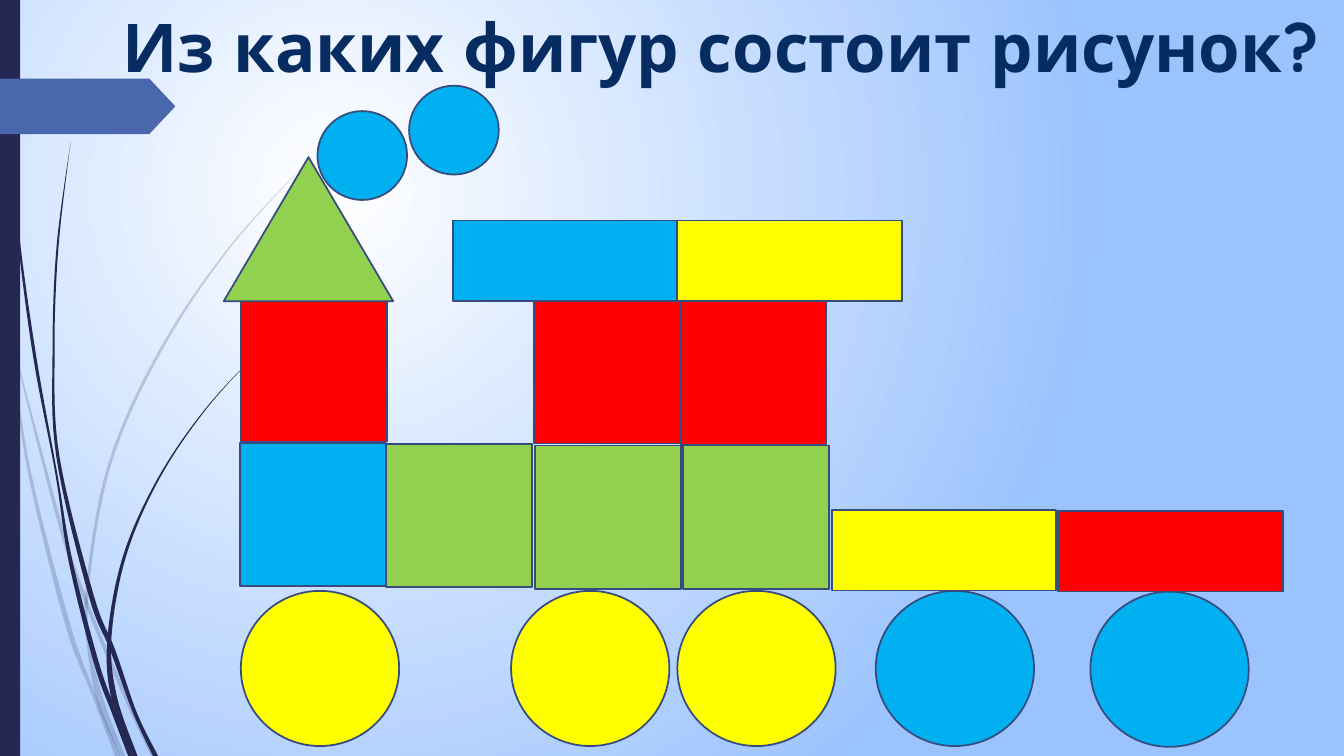
from lxml import etree
from pptx import Presentation
from pptx.dml.color import RGBColor
from pptx.enum.shapes import MSO_SHAPE
from pptx.enum.text import MSO_ANCHOR, MSO_AUTO_SIZE, PP_ALIGN
from pptx.oxml.ns import qn
from pptx.util import Cm, Pt

RECTANGLE = MSO_SHAPE.RECTANGLE
ELLIPSE = MSO_SHAPE.OVAL
TRIANGLE = MSO_SHAPE.ISOSCELES_TRIANGLE
PENTAGON = MSO_SHAPE.PENTAGON
TOP = MSO_ANCHOR.TOP
CENTER = PP_ALIGN.CENTER
NO_AUTOFIT = MSO_AUTO_SIZE.NONE

WHITE = RGBColor(0xFF, 0xFF, 0xFF)
SKY = RGBColor(0x9B, 0xC3, 0xFE)
NAVY = RGBColor(0x24, 0x28, 0x52)
INDIGO = RGBColor(0x4A, 0x66, 0xAC)
OUTLINE = RGBColor(0x37, 0x4B, 0x7F)
TITLE_BLUE = RGBColor(0x07, 0x2C, 0x62)
RED = RGBColor(0xFF, 0x00, 0x00)
YELLOW = RGBColor(0xFF, 0xFF, 0x00)
GREEN = RGBColor(0x92, 0xD0, 0x50)
BLUE = RGBColor(0x00, 0xB0, 0xF0)

FONT = "Quicksand"
SLIDE_WIDTH, SLIDE_HEIGHT = 33.87, 19.05
CURVE_STEPS = 8

PALE_STEMS = [
    [(0, 7.37, 0.08), (0.28, 8.89, 0.05), (0.75, 11.94, 0.08), (1.71, 15.75, 0.13),
     (2.36, 17.5, 0.1), (2.96, 19.05, 0.13)],
    [(0.38, 8.89, 0.03), (1.52, 13.23, 0.1), (2.18, 15.19, 0.1), (3.18, 17.6, 0.1),
     (3.87, 19.05, 0.13)],
    [(7.92, 3.89, 0), (5.8, 6.22, 0.05), (4.04, 8.84, 0.08), (2.76, 11.71, 0.08),
     (2.2, 14.83, 0.08), (2.26, 16.41, 0.1), (2.57, 17.78, 0.18), (3.09, 19.05, 0.13)],
]
DARK_STEMS = [
    [(0.09, 0, 0.03), (0.19, 2.79, 0.03), (0.46, 5.92, 0.05), (0.88, 9.02, 0.08),
     (1.42, 11.94, 0.05), (1.78, 14.15, 0.1), (2.43, 16.71, 0.13), (2.87, 17.93, 0.13),
     (3.28, 19.05, 0.1)],
    [(1.78, 3.58, 0), (1.45, 6.22, 0.05), (1.35, 8.86, 0.05), (1.46, 11.51, 0.08),
     (2.3, 15.01, 0.13), (2.84, 16.38, 0.13), (3.4, 17.96, 0.1), (3.92, 19.05, 0.13)],
    [(6.62, 8.74, 0), (5.19, 10.3, 0.03), (3.99, 12.07, 0.05), (3.14, 14.01, 0.08),
     (2.76, 16.05, 0.1), (2.87, 17.55, 0.15), (3.4, 19.05, 0.13)],
]

WHEEL = (ELLIPSE, 3.99, 3.91)
BLOCK = (RECTANGLE, 3.68, 3.61)
PLANK = (RECTANGLE, 5.66, 2.03)
ROOF = (TRIANGLE, 4.27, 3.63)
PUFF = (ELLIPSE, 2.26, 2.24)

TRAIN = [
    (WHEEL, YELLOW, [(0.43, 12.73), (7.24, 12.73), (11.43, 12.73)]),
    (WHEEL, BLUE, [(16.43, 12.73), (21.84, 12.75)]),
    (BLOCK, BLUE, [(0.41, 9)]),
    (BLOCK, GREEN, [(4.09, 9.02), (7.85, 9.07), (11.58, 9.07)]),
    (BLOCK, RED, [(7.82, 5.41), (11.51, 5.44), (0.43, 5.36)]),
    (PLANK, YELLOW, [(15.32, 10.69), (11.43, 3.4)]),
    (PLANK, RED, [(21.03, 10.72)]),
    (PLANK, BLUE, [(5.77, 3.4)]),
    (ROOF, GREEN, [(0, 1.8)]),
    (PUFF, BLUE, [(2.36, 0.64), (4.67, 0)]),
]


def write_text(frame, text, size=18, color=TITLE_BLUE, bold=False, align=CENTER):
    """Fill a text frame with one formatted paragraph."""
    frame.word_wrap = True
    frame.auto_size = NO_AUTOFIT
    frame.vertical_anchor = TOP
    paragraph = frame.paragraphs[0]
    paragraph.alignment = align
    paragraph.line_spacing = 1.0
    paragraph.space_before = Pt(0)
    run = paragraph.add_run()
    run.text = text
    run.font.name = FONT
    run.font.size = Pt(size)
    run.font.bold = bold
    run.font.color.rgb = color


def paint(figure, color, edge=None):
    """Give a figure a plain fill and an optional outline."""
    figure.shadow.inherit = False
    figure.fill.solid()
    figure.fill.fore_color.rgb = color
    if edge is None:
        figure.line.fill.background()
    else:
        figure.line.color.rgb = edge
        figure.line.width = Pt(1.25)


def add_figure(slide, kind, left, top, width, height, color, edge=None):
    """Place a painted preset figure, measured in centimetres."""
    figure = slide.shapes.add_shape(kind, Cm(left), Cm(top), Cm(width), Cm(height))
    paint(figure, color, edge)
    return figure


def smooth(knots):
    """Return points on a Catmull-Rom curve through the knots."""
    padded = [knots[0], *knots, knots[-1]]
    points = []
    for a, b, c, d in zip(padded, padded[1:], padded[2:], padded[3:]):
        for step in range(CURVE_STEPS):
            t = step / CURVE_STEPS
            points.append(tuple(
                q + t * (r - p) / 2 + t**2 * (2 * p - 5 * q + 4 * r - s) / 2
                + t**3 * (3 * q - p - 3 * r + s) / 2
                for p, q, r, s in zip(a, b, c, d)))
    return points + [knots[-1]]


def add_stem(slide, left, top, knots, opacity):
    """Draw a thin curved stem whose knots give x, y and thickness."""
    curve = smooth(knots)
    near = [(x - w / 2, y) for x, y, w in curve]
    far = [(x + w / 2, y) for x, y, w in reversed(curve)]
    outline = [(Cm(left + x), Cm(top + y)) for x, y in near + far]
    builder = slide.shapes.build_freeform(*outline[0])
    builder.add_line_segments(outline[1:], close=True)
    stem = builder.convert_to_shape()
    paint(stem, NAVY)
    if opacity < 100:
        tint = stem.fill._xPr.find(qn("a:solidFill"))[0]
        etree.SubElement(tint, qn("a:alpha")).set("val", str(opacity * 1000))


def add_background(slide):
    """Fill the slide with a circular glow."""
    fill = slide.background.fill
    fill.gradient()
    for stop, color in zip(fill.gradient_stops, (WHITE, SKY)):
        stop.color.rgb = color
    gradient = slide.element.find(".//" + qn("a:gradFill"))
    gradient.remove(gradient.find(qn("a:lin")))
    glow = etree.SubElement(gradient, qn("a:path"))
    glow.set("path", "circle")
    focus = etree.SubElement(glow, qn("a:fillToRect"))
    for side, percent in zip("ltrb", (50, 50, 100, 100)):
        focus.set(side, str(percent * 1000))


def add_side_decoration(slide, left, top, height):
    """Draw the stems, the side bar and the pointer."""
    for stems, opacity in ((PALE_STEMS, 20), (DARK_STEMS, 100)):
        for knots in stems:
            add_stem(slide, left, top, knots, opacity)
    add_figure(slide, RECTANGLE, left, top, 0.51, height, NAVY)
    pointer = add_figure(slide, PENTAGON, left, top + 1.98, 4.42, 1.4, INDIGO)
    pointer.adjustments[0] = 0.47


def add_title(slide, left, top, width, height):
    """Move the title placeholder and write the question."""
    title = slide.shapes.title
    title.left, title.top = Cm(left), Cm(top)
    title.width, title.height = Cm(width), Cm(height)
    write_text(title.text_frame, "Из каких фигур состоит рисунок?", size=48, bold=True)


def add_train(slide, left, top):
    """Assemble the train from coloured figures."""
    for (kind, width, height), color, places in TRAIN:
        for x, y in places:
            add_figure(slide, kind, left + x, top + y, width, height, color, OUTLINE)


def main():
    """Build and save the slide."""
    deck = Presentation()
    deck.slide_width, deck.slide_height = Cm(SLIDE_WIDTH), Cm(SLIDE_HEIGHT)
    slide = deck.slides.add_slide(deck.slide_layouts[5])
    add_background(slide)
    add_side_decoration(slide, 0, 0, SLIDE_HEIGHT)
    add_title(slide, 2.11, 0, 32.11, 2.31)
    add_train(slide, 5.64, 2.16)
    deck.save("out.pptx")


if __name__ == "__main__":
    main()
